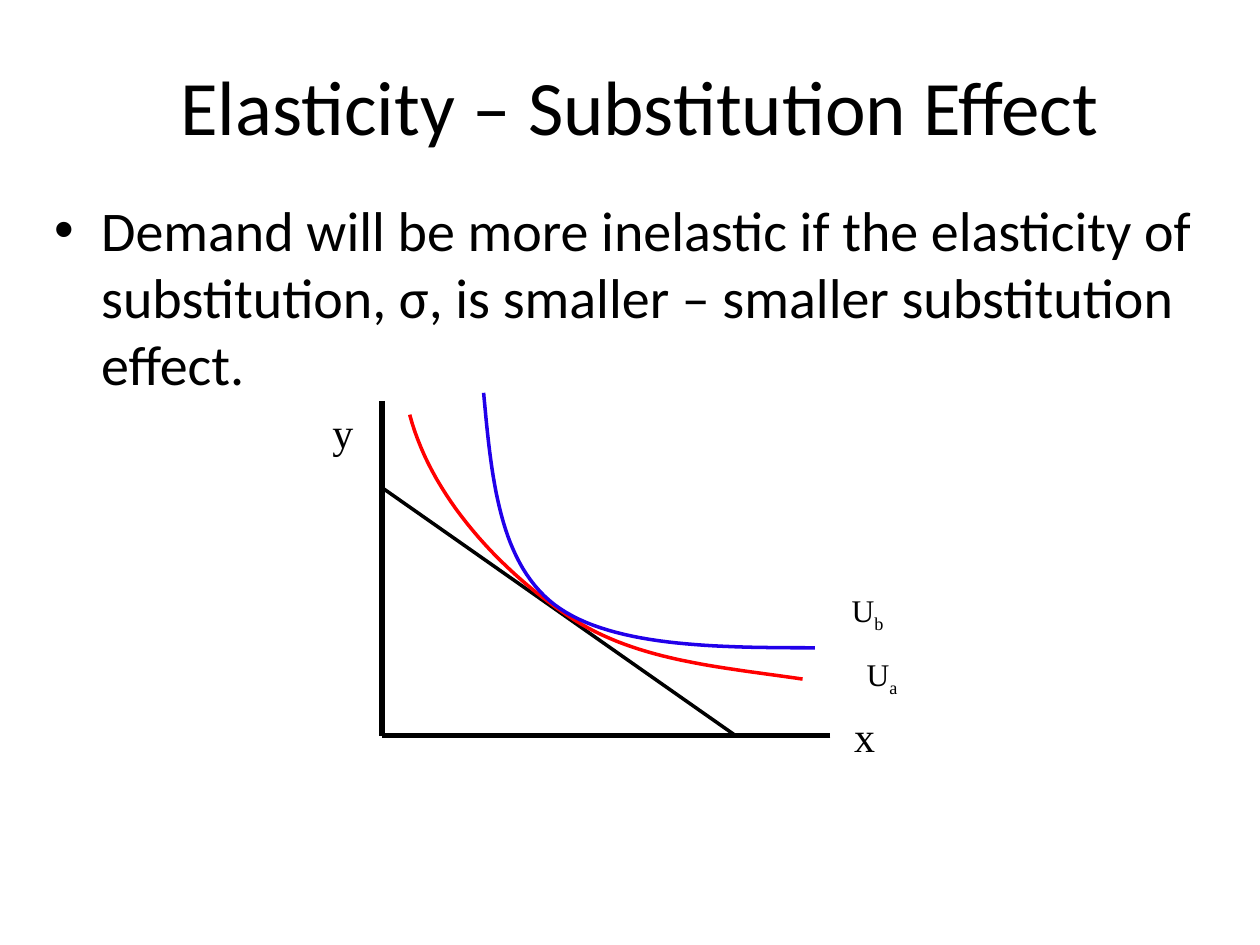
"""Build a slide on how the elasticity of substitution shapes demand."""
from lxml.etree import SubElement
from pptx import Presentation
from pptx.dml.color import RGBColor
from pptx.enum.shapes import MSO_CONNECTOR
from pptx.enum.text import MSO_ANCHOR, PP_ALIGN
from pptx.oxml.ns import qn
from pptx.util import Cm, Pt

BLACK = RGBColor(0x00, 0x00, 0x00)
RED = RGBColor(0xFF, 0x00, 0x00)
BLUE = RGBColor(0x21, 0x00, 0xEA)

TITLE = "Elasticity – Substitution Effect"
STATEMENT = (
    "Demand will be more inelastic if the elasticity of substitution, σ, "
    "is smaller – smaller substitution effect."
)
ORIGIN = (7.7, 14.83)
LINES = [
    ((7.7, 8.08), ORIGIN, 3),
    ((16.74, 14.83), ORIGIN, 3),
    ((7.7, 9.83), (14.83, 14.83), 2),
]
INDIFFERENCE_CURVES = [
    (RED, [(8.26, 8.36), (8.71, 10.06), (10.13, 11.53), (11.46, 12.42),
           (12.78, 13.31), (14.45, 13.44), (16.18, 13.69)]),
    (BLUE, [(9.75, 7.92), (9.91, 9.63), (10.06, 11.33), (11.18, 12.19),
            (12.29, 13.03), (14.38, 13.06), (16.43, 13.06)]),
]
LABELS = [
    ("y", "", 24, False, (6.45, 8.08, 0.94, 1.27)),
    ("U", "a", 18, False, (17.22, 13.08, 1.17, 1.02)),
    ("x", "", 24, True, (16.97, 14.2, 0.76, 1.27)),
    ("U", "b", 18, False, (16.92, 11.79, 1.19, 1.02)),
]
CURVE_STEPS = 30


def set_attributes(target, values):
    for name, value in values.items():
        setattr(target, name, value)


def add_run(paragraph, text, size, font_name):
    run = paragraph.add_run()
    run.text = text
    set_attributes(run.font, {"size": Pt(size), "name": font_name})
    run.font.color.rgb = BLACK
    return run


def add_text(slide, box, text, size, font_name, wrap=True, anchor=MSO_ANCHOR.TOP):
    frame = slide.shapes.add_textbox(*map(Cm, box)).text_frame
    set_attributes(frame, {"word_wrap": wrap, "vertical_anchor": anchor})
    paragraph = frame.paragraphs[0]
    add_run(paragraph, text, size, font_name)
    return paragraph


def add_bullet(paragraph, indent):
    properties = paragraph._p.get_or_add_pPr()
    properties.set("marL", str(Cm(indent)))
    properties.set("indent", str(-Cm(indent)))
    SubElement(properties, qn("a:buFont"), typeface="Arial")
    SubElement(properties, qn("a:buChar"), char="•")


def style_line(shape, color, width):
    shape.line.color.rgb = color
    shape.line.width = Pt(width)


def add_line(slide, start, end, width):
    connector = slide.shapes.add_connector(
        MSO_CONNECTOR.STRAIGHT, *map(Cm, start + end))
    style_line(connector, BLACK, width)
    SubElement(connector._element.spPr, qn("a:effectLst"))


def bezier_point(controls, fraction):
    rest = 1 - fraction
    weights = (rest ** 3, 3 * rest ** 2 * fraction,
               3 * rest * fraction ** 2, fraction ** 3)
    return tuple(Cm(sum(weight * value for weight, value in zip(weights, axis)))
                 for axis in zip(*controls))


def add_curve(slide, color, controls):
    points = [
        bezier_point(controls[first:first + 4], step / CURVE_STEPS)
        for first in range(0, len(controls) - 1, 3)
        for step in range(1, CURVE_STEPS + 1)
    ]
    builder = slide.shapes.build_freeform(*map(Cm, controls[0]))
    builder.add_line_segments(points, close=False)
    shape = builder.convert_to_shape()
    shape.shadow.inherit = False
    shape.fill.background()
    style_line(shape, color, 2)


def main():
    presentation = Presentation()
    set_attributes(presentation, {"slide_width": Cm(25.4), "slide_height": Cm(19.05)})
    slide = presentation.slides.add_slide(presentation.slide_layouts[6])

    title = add_text(slide, (1.47, 0.84, 22.86, 2.54), TITLE, 44, "Calibri",
                     anchor=MSO_ANCHOR.MIDDLE)
    title.alignment = PP_ALIGN.CENTER
    statement = add_text(slide, (0.84, 3.81, 23.93, 15.04), STATEMENT, 32, "Calibri")
    statement.space_before = Pt(6.4)
    add_bullet(statement, 0.95)

    for start, end, width in LINES:
        add_line(slide, start, end, width)
    for color, controls in INDIFFERENCE_CURVES:
        add_curve(slide, color, controls)
    for text, subscript, size, wrap, box in LABELS:
        label = add_text(slide, box, text, size, "Times New Roman", wrap)
        if subscript:
            run = add_run(label, subscript, size, "Times New Roman")
            run.font._element.set("baseline", "-25000")

    presentation.save("out.pptx")


if __name__ == "__main__":
    main()
